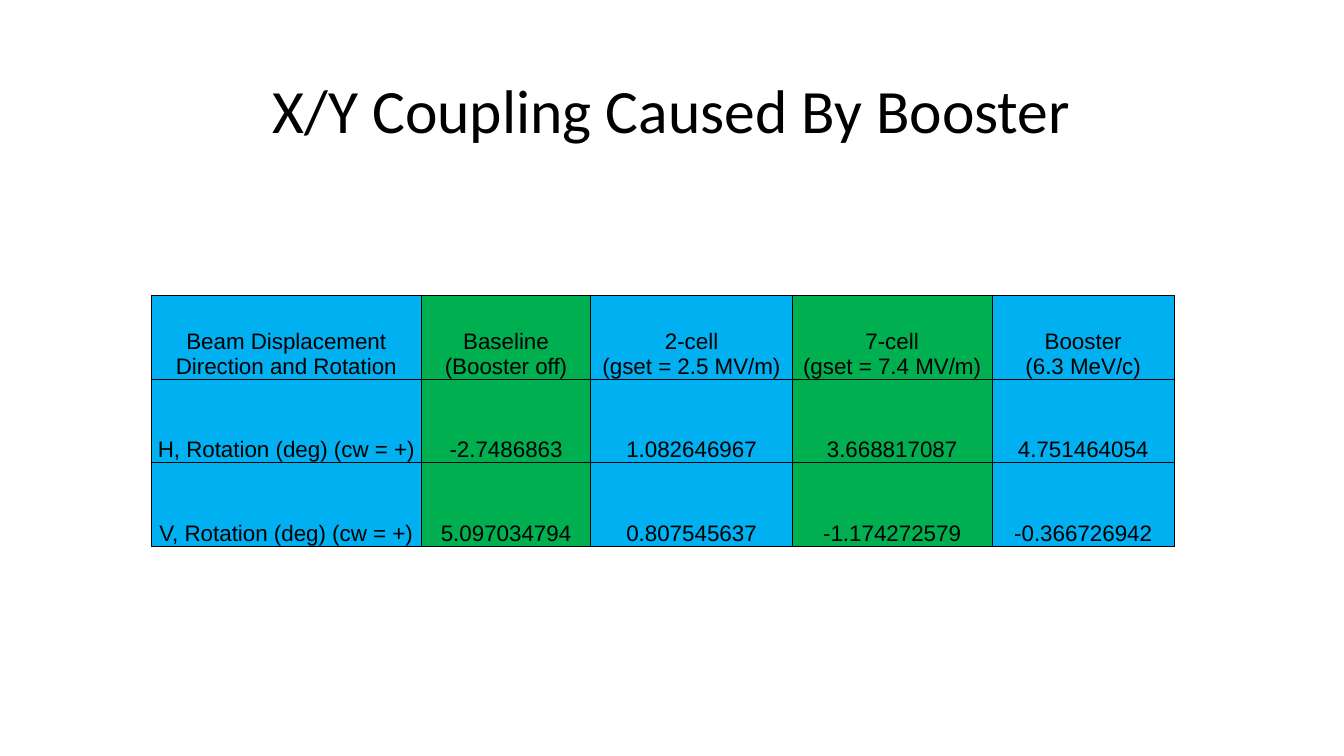
from lxml import etree
from pptx import Presentation
from pptx.dml.color import RGBColor
from pptx.enum.text import MSO_ANCHOR, PP_ALIGN
from pptx.oxml.ns import qn
from pptx.util import Pt

MIDDLE, BOTTOM = MSO_ANCHOR.MIDDLE, MSO_ANCHOR.BOTTOM
CENTER = PP_ALIGN.CENTER

BLACK = RGBColor(0x00, 0x00, 0x00)
BLUE = RGBColor(0x00, 0xB0, 0xF0)
GREEN = RGBColor(0x00, 0xB0, 0x50)

TITLE_ONLY = 5
COLUMN_WIDTHS = [193, 121, 144, 142.5, 130.5]
ROW_HEIGHT = 59.75
ROTATION_ROWS = [
    ["Beam Displacement Direction and Rotation", "Baseline\n(Booster off)",
     "2-cell\n(gset = 2.5 MV/m)", "7-cell\n(gset = 7.4 MV/m)",
     "Booster\n(6.3 MeV/c)"],
    ["H, Rotation (deg) (cw = +)", "-2.7486863", "1.082646967",
     "3.668817087", "4.751464054"],
    ["V, Rotation (deg) (cw = +)", "5.097034794", "0.807545637",
     "-1.174272579", "-0.366726942"],
]


def write_text(text_frame, text, *, font, size, color=BLACK, line_spacing=None):
    text_frame.text = text
    for paragraph in text_frame.paragraphs:
        paragraph.alignment = CENTER
        if line_spacing:
            paragraph.line_spacing = line_spacing
        for run in paragraph.runs:
            run.font.name = font
            run.font.size = Pt(size)
            run.font.color.rgb = color


def add_title(slide, text):
    title = slide.shapes.title
    title.left, title.top = Pt(66), Pt(28.75)
    title.width, title.height = Pt(828), Pt(104.5)
    title.text_frame.vertical_anchor = MIDDLE
    write_text(title.text_frame, text, font="Calibri", size=44, line_spacing=0.9)


def set_borders(cell, color, width):
    # Border lines come before the fill in the cell properties
    properties = cell._tc.get_or_add_tcPr()
    for index, side in enumerate(("a:lnL", "a:lnR", "a:lnT", "a:lnB")):
        line = etree.Element(qn(side), w=str(Pt(width)))
        fill = etree.SubElement(line, qn("a:solidFill"))
        etree.SubElement(fill, qn("a:srgbClr"), val=str(color))
        properties.insert(index, line)


def format_cell(cell, text, fill_color):
    cell.fill.solid()
    cell.fill.fore_color.rgb = fill_color
    cell.vertical_anchor = BOTTOM
    cell.margin_left = cell.margin_right = cell.margin_top = Pt(0.75)
    cell.margin_bottom = Pt(0)
    write_text(cell.text_frame, text, font="Arial", size=16)
    set_borders(cell, BLACK, 0.5)


def add_rotation_table(slide, rows, left, top):
    frame = slide.shapes.add_table(
        len(rows), len(COLUMN_WIDTHS), Pt(left), Pt(top),
        Pt(sum(COLUMN_WIDTHS)), Pt(ROW_HEIGHT * len(rows)))
    table = frame.table
    for column, width in zip(table.columns, COLUMN_WIDTHS):
        column.width = Pt(width)
    for row_index, texts in enumerate(rows):
        table.rows[row_index].height = Pt(ROW_HEIGHT)
        for column_index, text in enumerate(texts):
            # Columns alternate between blue and green
            fill_color = GREEN if column_index % 2 else BLUE
            format_cell(table.cell(row_index, column_index), text, fill_color)


def main():
    presentation = Presentation()
    presentation.slide_width, presentation.slide_height = Pt(960), Pt(540)
    slide = presentation.slides.add_slide(presentation.slide_layouts[TITLE_ONLY])

    # Title
    add_title(slide, "X/Y Coupling Caused By Booster")

    # Rotation values
    add_rotation_table(slide, ROTATION_ROWS, left=108, top=211)

    presentation.save("out.pptx")


if __name__ == "__main__":
    main()
